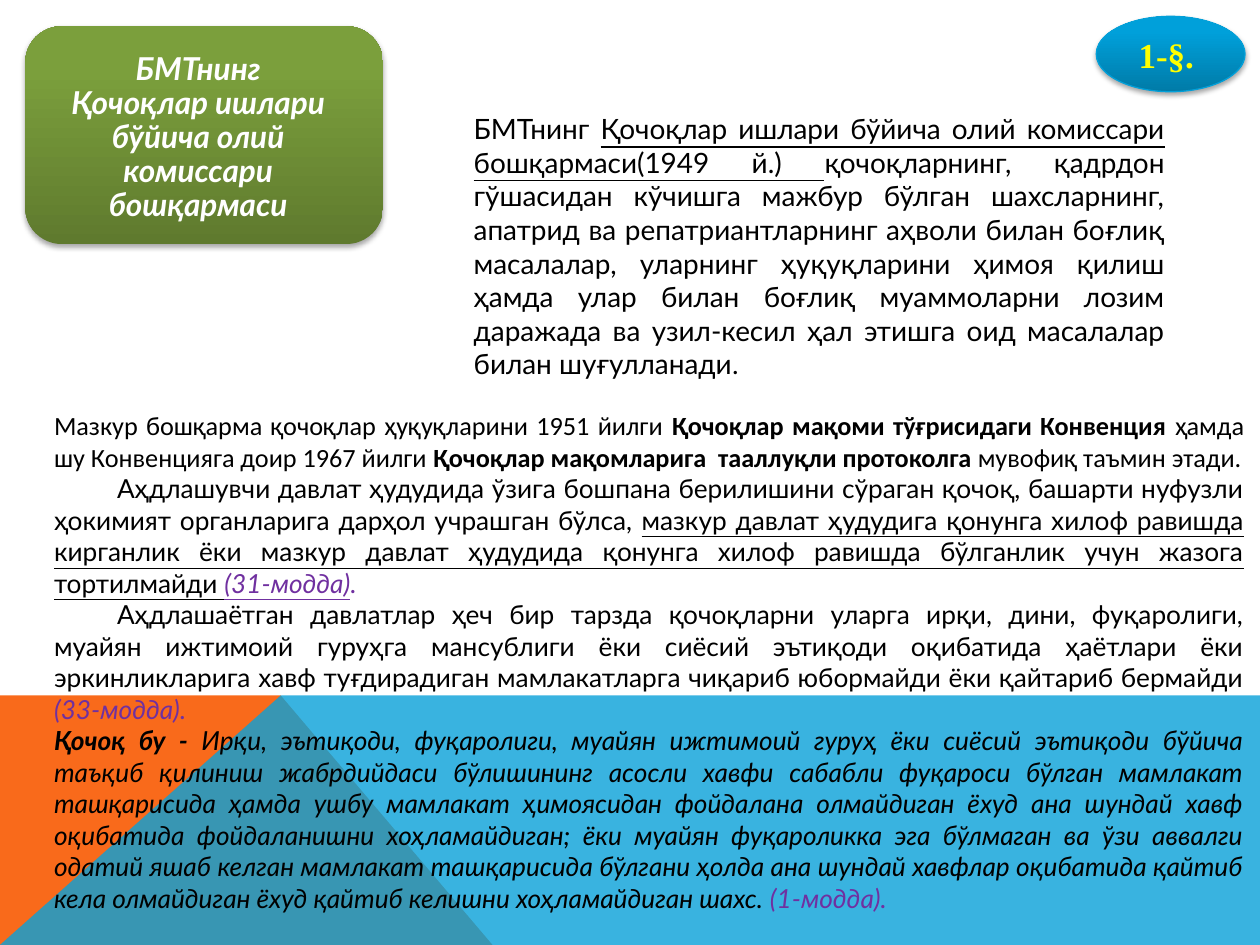
from lxml import etree
from pptx import Presentation
from pptx.dml.color import RGBColor
from pptx.enum.shapes import MSO_SHAPE
from pptx.enum.text import MSO_ANCHOR, PP_ALIGN
from pptx.oxml import parse_xml
from pptx.oxml.ns import nsdecls, qn
from pptx.util import Cm, Pt

OVAL, ROUNDED = MSO_SHAPE.OVAL, MSO_SHAPE.ROUNDED_RECTANGLE
CENTER, JUSTIFY = PP_ALIGN.CENTER, PP_ALIGN.JUSTIFY
MIDDLE = MSO_ANCHOR.MIDDLE

ORANGE = RGBColor(0xF9, 0x6A, 0x1B)
SKY = RGBColor(0x08, 0xA1, 0xD9)
BLUE_DARK = RGBColor(0x00, 0x7B, 0xA8)
BLUE = RGBColor(0x00, 0xA0, 0xDA)
BLUE_LINE = RGBColor(0x03, 0xA0, 0xD9)
GREEN_DARK = RGBColor(0x5F, 0x7A, 0x2E)
GREEN = RGBColor(0x7B, 0x9F, 0x3C)
YELLOW = RGBColor(0xFF, 0xFF, 0x00)
WHITE = RGBColor(0xFF, 0xFF, 0xFF)
BLACK = RGBColor(0x00, 0x00, 0x00)
PURPLE = RGBColor(0x70, 0x30, 0xA0)

SHADOW = (
    f'<a:outerShdw {nsdecls("a")} blurRad="39370" dist="22860" dir="5400000" rotWithShape="0">'
    '<a:srgbClr val="000000"><a:alpha val="35000"/></a:srgbClr></a:outerShdw>'
)


def style_glossy(shape, bottom, top):
    """Give a shape a vertical gradient and a soft shadow below it."""
    shape.fill.gradient()
    shape.fill.gradient_angle = 90
    for stop, color, position in zip(shape.fill.gradient_stops, (bottom, top), (0, 0.8)):
        stop.color.rgb = color
        stop.position = position
    shape.shadow.inherit = False
    shape._element.spPr.find(qn("a:effectLst")).append(parse_xml(SHADOW))


def fill_paragraphs(text_frame, paragraphs, size):
    """Write justified paragraphs, each a list of (text, font name, styles, color) runs."""
    text_frame.word_wrap = True
    for index, runs in enumerate(paragraphs):
        paragraph = text_frame.paragraphs[0] if index == 0 else text_frame.add_paragraph()
        paragraph.alignment = JUSTIFY
        for text, font_name, styles, color in runs:
            run = paragraph.add_run()
            run.text = text
            run.font.name = font_name
            run.font.size = Pt(size)
            run.font.color.rgb = color
            run.font.bold = "b" in styles
            run.font.italic = "i" in styles
            run.font.underline = "u" in styles


presentation = Presentation()
presentation.slide_width, presentation.slide_height = Cm(25.4), Cm(19.05)
slide = presentation.slides.add_slide(presentation.slide_layouts[6])

# Bottom band
band_top, bottom, right, peak = 14.02, 19.05, 25.4, 5.66
bands = [
    (ORANGE, [(0, bottom), (0, band_top), (peak, band_top), (9.93, bottom)]),
    (SKY, [(0, bottom), (peak, band_top), (right, band_top), (right, bottom)]),
]
for color, corners in bands:
    points = [(Cm(x), Cm(y)) for x, y in corners]
    builder = slide.shapes.build_freeform(*points[0])
    builder.add_line_segments(points[1:], close=True)
    band = builder.convert_to_shape()
    band.fill.solid()
    band.fill.fore_color.rgb = color
    band.line.fill.background()
    band.shadow.inherit = False
sky_color = band._element.spPr.find(qn("a:solidFill"))[0]
etree.SubElement(sky_color, qn("a:alpha")).set("val", "80000")

# Section number
badge = slide.shapes.add_shape(OVAL, Cm(22.1), Cm(0.33), Cm(3), Cm(1.52))
style_glossy(badge, BLUE_DARK, BLUE)
badge.line.color.rgb = BLUE_LINE
badge.line.width = Pt(0.75)
badge.text_frame.text = "1-§. "
badge.text_frame.vertical_anchor = MIDDLE
paragraph = badge.text_frame.paragraphs[0]
paragraph.alignment = CENTER
font = paragraph.runs[0].font
font.name, font.size, font.bold = "Times New Roman", Pt(20), True
font.color.rgb = YELLOW

# Title card
card_group = slide.shapes.add_group_shape()
card = card_group.shapes.add_shape(ROUNDED, Cm(0.51), Cm(0.53), Cm(7.21), Cm(4.39))
style_glossy(card, GREEN_DARK, GREEN)
card.line.fill.background()
title = card_group.shapes.add_textbox(Cm(0.91), Cm(1.32), Cm(6.17), Cm(2.95))
text_frame = title.text_frame
text_frame.text = "БМТнинг Қочоқлар ишлари бўйича олий комиссари бошқармаси"
text_frame.word_wrap = True
text_frame.vertical_anchor = MIDDLE
text_frame.margin_left = text_frame.margin_right = Cm(0.38)
text_frame.margin_top = text_frame.margin_bottom = Cm(0.38)
paragraph = text_frame.paragraphs[0]
paragraph.alignment = CENTER
paragraph.line_spacing = 0.9
font = paragraph.runs[0].font
font.name, font.size, font.bold, font.italic = "Lato", Pt(18), True, True
font.color.rgb = WHITE

# Introduction
introduction = slide.shapes.add_textbox(Cm(9.3), Cm(2.13), Cm(14.43), Cm(5.74))
fill_paragraphs(introduction.text_frame, [[
    ("БМТнинг ", "Lato", "", BLACK),
    ("Қочоқлар ишлари бўйича олий комиссари бошқармаси(1949 й.) ", "Lato", "u", BLACK),
    ("қочоқларнинг, қадрдон гўшасидан кўчишга мажбур бўлган шахсларнинг, апатрид ва "
     "репатриантларнинг аҳволи билан боғлиқ масалалар, уларнинг ҳуқуқларини ҳимоя қилиш "
     "ҳамда улар билан боғлиқ муаммоларни лозим даражада ва узил-кесил ҳал этишга оид "
     "масалалар билан шуғулланади", "Lato", "", BLACK),
    (".", "Calibri", "", BLACK),
]], 16)

# Convention articles
articles = slide.shapes.add_textbox(Cm(0.84), Cm(8.13), Cm(24.49), Cm(9.88))
fill_paragraphs(articles.text_frame, [
    [
        ("Мазкур бошқарма қочоқлар ҳуқуқларини 1951 йилги ", "Calibri", "", BLACK),
        ("Қочоқлар мақоми тўғрисидаги Конвенция ", "Calibri", "b", BLACK),
        ("ҳамда шу Конвенцияга доир 1967 йилги ", "Calibri", "", BLACK),
        ("Қочоқлар мақомларига  тааллуқли протоколга ", "Calibri", "b", BLACK),
        ("мувофиқ таъмин этади.", "Calibri", "", BLACK),
    ],
    [
        ("\tАҳдлашувчи давлат ҳудудида ўзига бошпана берилишини сўраган қочоқ, башарти "
         "нуфузли ҳокимият органларига дарҳол учрашган бўлса, ", "Lato", "", BLACK),
        ("мазкур давлат ҳудудига қонунга хилоф равишда кирганлик ёки мазкур давлат ҳудудида "
         "қонунга хилоф равишда бўлганлик учун жазога тортилмайди ", "Lato", "u", BLACK),
        ("(31-модда)", "Lato", "iu", PURPLE),
        (".", "Lato", "i", PURPLE),
    ],
    [
        ("\tАҳдлашаётган давлатлар ҳеч бир тарзда қочоқларни уларга ирқи, дини, фуқаролиги, "
         "муайян ижтимоий гуруҳга мансублиги ёки сиёсий эътиқоди оқибатида ҳаётлари ёки "
         "эркинликларига хавф туғдирадиган мамлакатларга чиқариб юбормайди ёки қайтариб "
         "бермайди ", "Lato", "", BLACK),
        ("(33-модда).", "Lato", "i", PURPLE),
    ],
    [
        ("Қочоқ бу - ", "Lato", "bi", BLACK),
        ("Ирқи, эътиқоди, фуқаролиги, муайян ижтимоий гуруҳ ёки сиёсий эътиқоди бўйича таъқиб "
         "қилиниш жабрдийдаси бўлишининг асосли хавфи сабабли фуқароси бўлган мамлакат "
         "ташқарисида ҳамда ушбу мамлакат ҳимоясидан фойдалана олмайдиган ёхуд ана шундай хавф "
         "оқибатида фойдаланишни хоҳламайдиган; ёки муайян фуқароликка эга бўлмаган ва ўзи "
         "аввалги одатий яшаб келган мамлакат ташқарисида бўлгани ҳолда ана шундай хавфлар "
         "оқибатида қайтиб кела олмайдиган ёхуд қайтиб келишни хоҳламайдиган шахс.",
         "Lato", "i", BLACK),
        (" (1-модда).", "Lato", "i", PURPLE),
    ],
], 15)

presentation.save("out.pptx")
